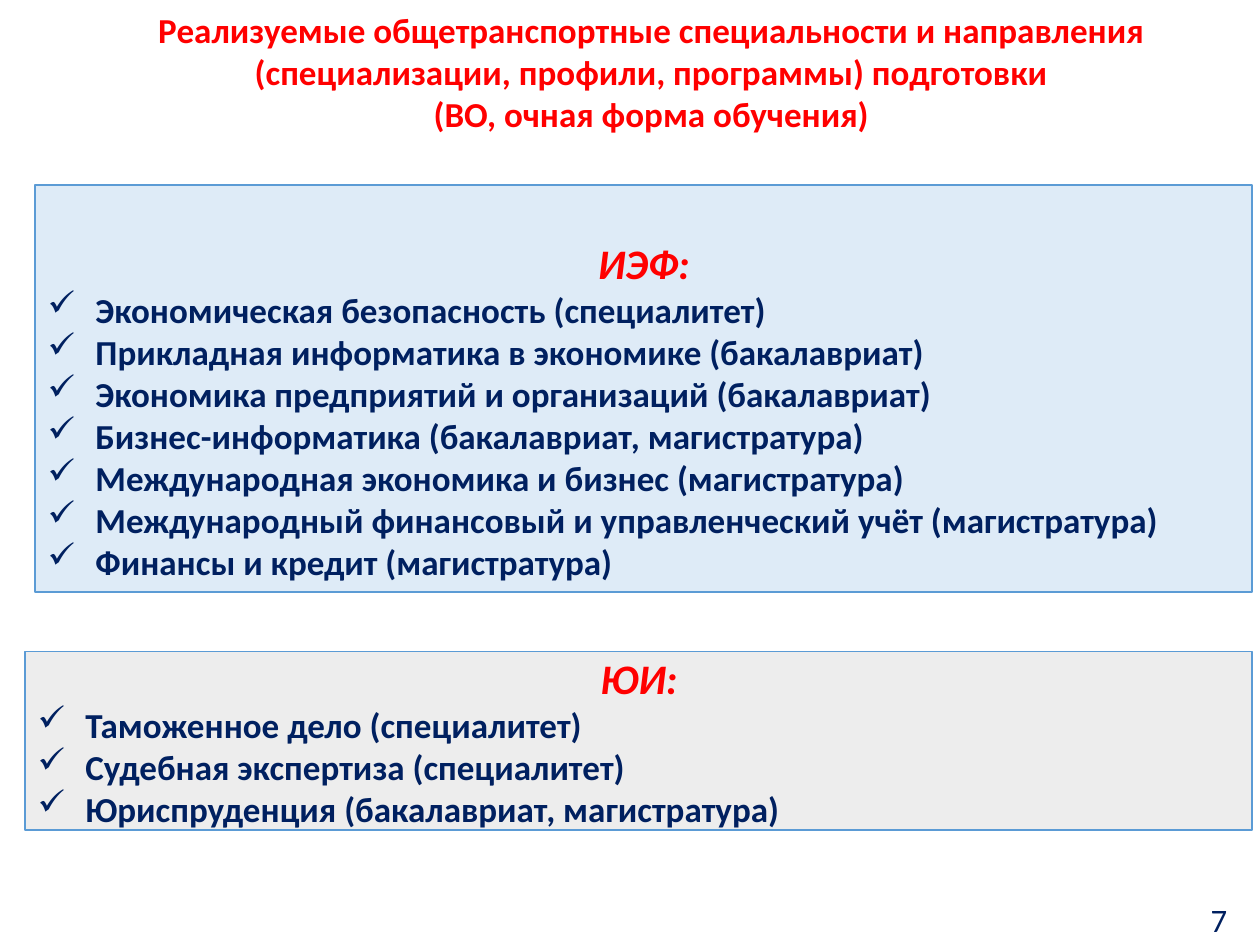
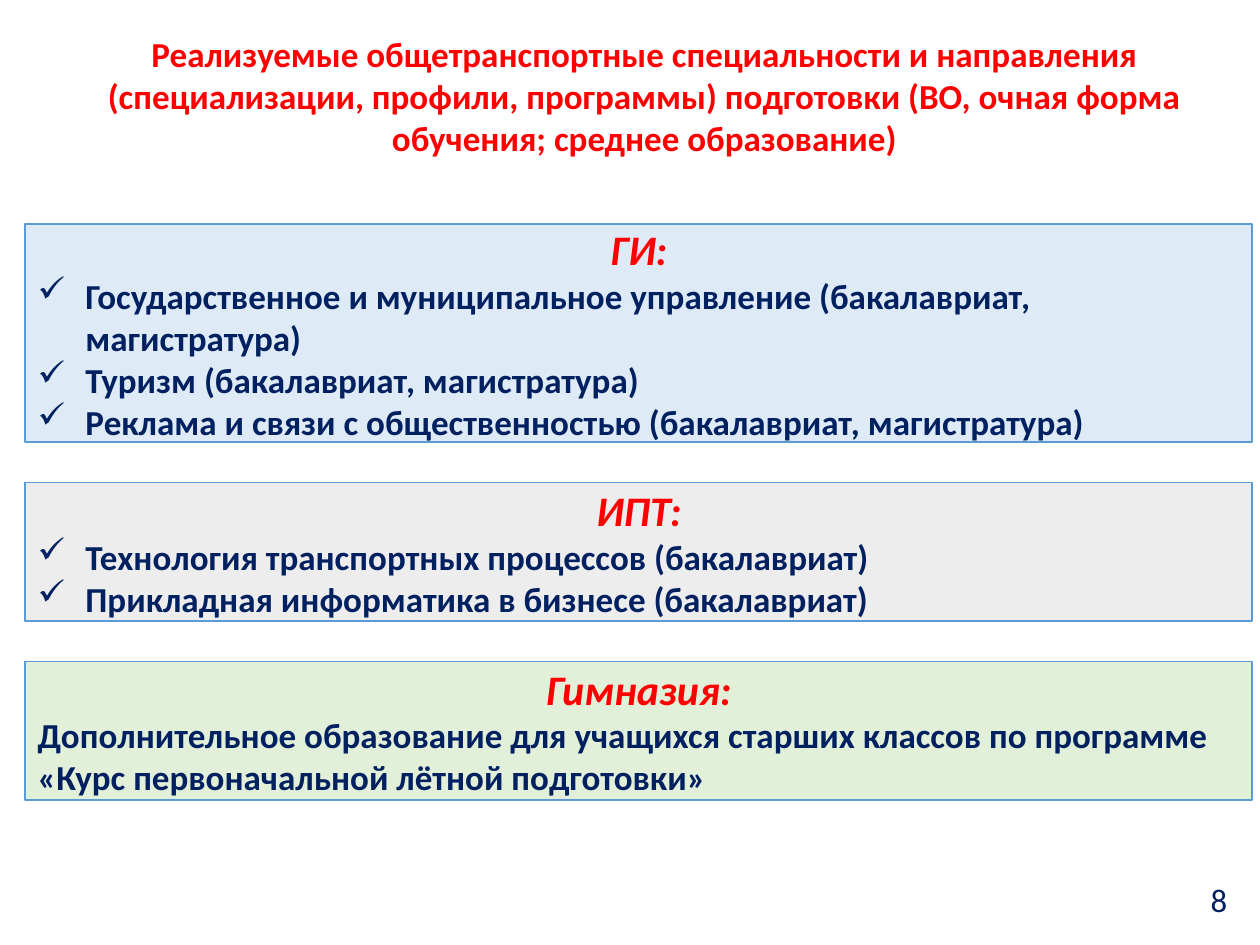
import pptx
import pptx.dml.color
import pptx.enum.shapes
import pptx.enum.text
import pptx.util
from lxml import etree
from pptx.oxml.ns import qn

Inches = pptx.util.Inches
CENTER = pptx.enum.text.PP_ALIGN.CENTER
LEFT = pptx.enum.text.PP_ALIGN.LEFT

COLORS = {
    "white": "FFFFFF",
    "red": "FF0000",
    "navy": "002060",
    "border": "5B9BD5",
    "blue": "DEEBF7",
    "gray": "EDEDED",
    "green": "E2F0D9",
}
FONT = "Calibri"
PANEL_RIGHT = 9.94
BULLET_INDENT = 0.38


def color(name):
    return pptx.dml.color.RGBColor.from_string(COLORS[name])


def add_box(slide, left, top, width, height, fill="white", line=None, top_inset=0):
    box = slide.shapes.add_shape(
        pptx.enum.shapes.MSO_SHAPE.RECTANGLE,
        Inches(left), Inches(top), Inches(width), Inches(height))
    box.shadow.inherit = False
    box.fill.solid()
    box.fill.fore_color.rgb = color(fill)
    if line:
        box.line.color.rgb = color(line)
        box.line.width = pptx.util.Pt(1)
    else:
        box.line.fill.background()
    frame = box.text_frame
    frame.word_wrap = True
    frame.vertical_anchor = pptx.enum.text.MSO_ANCHOR.MIDDLE
    frame.margin_top = Inches(top_inset)
    frame.margin_bottom = 0
    return frame


def write(frame, text, size=20, ink="navy", bold=True, italic=False,
          align=LEFT, bullet=False):
    """Write a paragraph, using the empty first one of a new frame."""
    first = frame.paragraphs[0]
    paragraph = frame.add_paragraph() if first.runs else first
    paragraph.alignment = align
    run = paragraph.add_run()
    run.text = text
    run.font.name = FONT
    run.font.size = pptx.util.Pt(size)
    run.font.bold = bold
    run.font.italic = italic
    run.font.color.rgb = color(ink)
    if bullet:
        properties = paragraph._p.get_or_add_pPr()
        properties.set("marL", str(Inches(BULLET_INDENT)))
        properties.set("indent", str(-Inches(BULLET_INDENT)))
        etree.SubElement(properties, qn("a:buChar")).set("char", "✓")


def add_title(slide, lines, left, top, width, height):
    frame = add_box(slide, left, top, width, height)
    for line in lines:
        write(frame, line, ink="red", align=CENTER)


def add_page_number(slide, number, top):
    frame = add_box(slide, 9.36, top, 0.63, 0.31)
    write(frame, str(number), size=18.7, bold=False, align=CENTER)


def add_panel(slide, heading, items, top, height, fill, left=0.2,
              bullet=True, top_inset=0):
    """Draw one institute's panel and return its bottom edge."""
    frame = add_box(slide, left, top, PANEL_RIGHT - left, height,
                    fill=fill, line="border", top_inset=top_inset)
    write(frame, heading, size=24, ink="red", italic=True, align=CENTER)
    for item in items:
        write(frame, item, bullet=bullet)
    return top + height


def build_economics_and_law(slide):
    add_title(slide, [
        "Реализуемые общетранспортные специальности и направления",
        "(специализации, профили, программы) подготовки",
        "(ВО, очная форма обучения)",
    ], 0.45, 0.05, 9.44, 1.03)
    bottom = add_panel(slide, "ИЭФ:", [
        "Экономическая безопасность (специалитет)",
        "Прикладная информатика в экономике (бакалавриат)",
        "Экономика предприятий и организаций (бакалавриат)",
        "Бизнес-информатика (бакалавриат, магистратура)",
        "Международная экономика и бизнес (магистратура)",
        "Международный финансовый и управленческий учёт (магистратура)",
        "Финансы и кредит (магистратура)",
    ], 1.47, 3.23, "blue", left=0.28, top_inset=0.34)
    add_panel(slide, "ЮИ:", [
        "Таможенное дело (специалитет)",
        "Судебная экспертиза (специалитет)",
        "Юриспруденция (бакалавриат, магистратура)",
    ], bottom + 0.47, 1.42, "gray")
    add_page_number(slide, 7, 7.14)


def build_humanities_and_school(slide):
    gap = 0.32
    add_title(slide, [
        "Реализуемые общетранспортные специальности и направления "
        "(специализации, профили, программы) подготовки "
        "(ВО, очная форма обучения; среднее образование)",
    ], 0.35, 0.13, 9.53, 1.26)
    bottom = add_panel(slide, "ГИ:", [
        "Государственное и муниципальное управление (бакалавриат, магистратура)",
        "Туризм (бакалавриат, магистратура)",
        "Реклама и связи с общественностью (бакалавриат, магистратура)",
    ], 1.78, 1.73, "blue")
    bottom = add_panel(slide, "ИПТ:", [
        "Технология транспортных процессов (бакалавриат)",
        "Прикладная информатика в бизнесе (бакалавриат)",
    ], bottom + gap, 1.1, "gray")
    add_panel(slide, "Гимназия:", [
        "Дополнительное образование для учащихся старших классов по программе",
        "«Курс первоначальной лётной подготовки»",
    ], bottom + gap, 1.1, "green", bullet=False)
    add_page_number(slide, 8, 6.98)


def main():
    deck = pptx.Presentation()
    deck.slide_width = Inches(10)
    deck.slide_height = Inches(7.5)
    blank = deck.slide_layouts[6]
    for build in (build_economics_and_law, build_humanities_and_school):
        build(deck.slides.add_slide(blank))
    deck.save("out.pptx")


if __name__ == "__main__":
    main()
